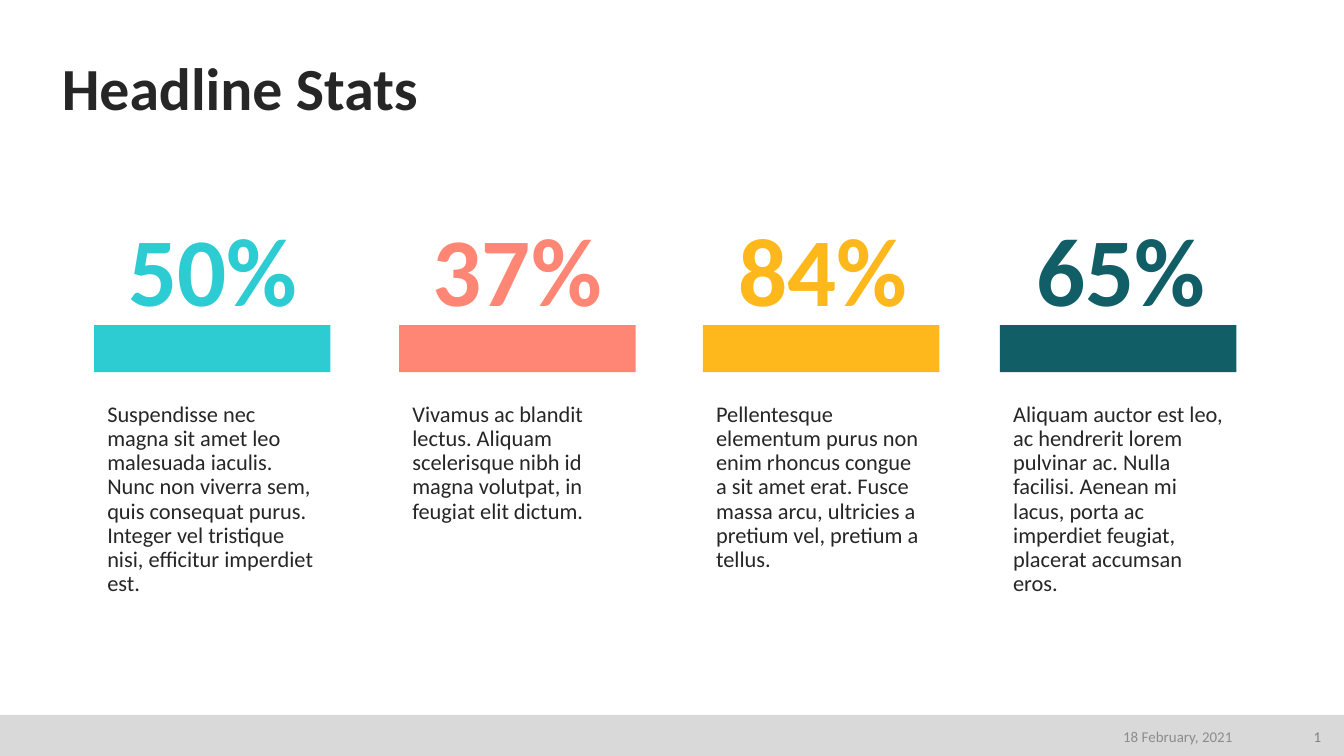
from pptx import Presentation
from pptx.dml.color import RGBColor
from pptx.enum.shapes import MSO_SHAPE as Shape
from pptx.enum.text import MSO_ANCHOR as Anchor, PP_ALIGN as Align
from pptx.util import Inches, Pt

# Colours
INK = RGBColor(0x26, 0x26, 0x26)
BAND = RGBColor(0xD9, 0xD9, 0xD9)
DATE = RGBColor(0x8C, 0x8C, 0x8C)
PAGE = RGBColor(0x80, 0x80, 0x80)
AQUA = RGBColor(0x2D, 0xCC, 0xD3)
CORAL = RGBColor(0xFF, 0x86, 0x74)
GOLD = RGBColor(0xFF, 0xB8, 0x1C)
TEAL = RGBColor(0x11, 0x5E, 0x67)

# Content: left edge, left and width of figure, figure, colour, note
TITLE = "Headline Stats"
STATS = [
    (0.7, 0.68, 1.81, "50%", AQUA,
     "Suspendisse nec magna sit amet leo malesuada iaculis. Nunc non viverra "
     "sem, quis consequat purus. Integer vel tristique nisi, efficitur "
     "imperdiet est."),
    (2.97, 3, 1.7, "37%", CORAL,
     "Vivamus ac blandit lectus. Aliquam scelerisque nibh id magna volutpat, "
     "in feugiat elit dictum."),
    (5.23, 5.23, 1.79, "84%", GOLD,
     "Pellentesque elementum purus non enim rhoncus congue a sit amet erat. "
     "Fusce massa arcu, ultricies a pretium vel, pretium a tellus."),
    (7.44, 7.46, 1.76, "65%", TEAL,
     "Aliquam auctor est leo, ac hendrerit lorem pulvinar ac. Nulla facilisi. "
     "Aenean mi lacus, porta ac imperdiet feugiat, placerat accumsan eros."),
]
# Footer: left, width, text, colour
FOOT = [(7.02, 2.25, "18 February, 2021", DATE), (9.56, 0.37, "1", PAGE)]
WIDE = 1.76

# Slide in 16:9
deck = Presentation()
deck.slide_width = Inches(10)
deck.slide_height = Inches(10 * 9 / 16)
slide = deck.slides.add_slide(deck.slide_layouts[5])


def add_bar(x, y, w, h, color):
    bar = slide.shapes.add_shape(
        Shape.RECTANGLE, Inches(x), Inches(y), Inches(w), Inches(h))
    bar.shadow.inherit = False
    bar.fill.solid()
    bar.fill.fore_color.rgb = color
    bar.line.fill.background()


def add_text(text, x, y, w, h, box=None, size=12, color=INK, bold=False,
             align=Align.LEFT, anchor=Anchor.TOP, space=1.0, wrap=True):
    at = [Inches(n) for n in (x, y, w, h)]
    if box is None:
        box = slide.shapes.add_textbox(*at)
    else:
        box.left, box.top, box.width, box.height = at
    frame = box.text_frame
    frame.word_wrap = wrap
    frame.vertical_anchor = anchor
    para = frame.paragraphs[0]
    para.alignment = align
    para.line_spacing = space
    para.space_before = Pt(0)
    run = para.add_run()
    run.text = text
    font = run.font
    font.name, font.size, font.bold = "Calibri", Pt(size), bold
    font.color.rgb = color
    return frame


# Footer band
add_bar(0, 5.32, 10, 0.31, BAND)

# Title
head = add_text(TITLE, 0.46, 0.4, 9.1, 0.52, box=slide.shapes.title, size=32,
                bold=True, anchor=Anchor.BOTTOM, space=0.9)
head.margin_left = head.margin_right = head.margin_top = head.margin_bottom = 0

# Stat columns
for x, left, w, figure, color, note in STATS:
    add_text(note, x, 2.95, WIDE, 1.87, space=0.9)
    add_bar(x, 2.42, WIDE, 0.35, color)
    add_text(figure, left, 1.51, w, 0.98, size=52, color=color, bold=True,
             align=Align.CENTER, wrap=False)

# Date and page number
for x, w, text, color in FOOT:
    add_text(text, x, 5.35, w, 0.26, size=8, color=color,
             align=Align.RIGHT, anchor=Anchor.MIDDLE)

deck.save("out.pptx")
